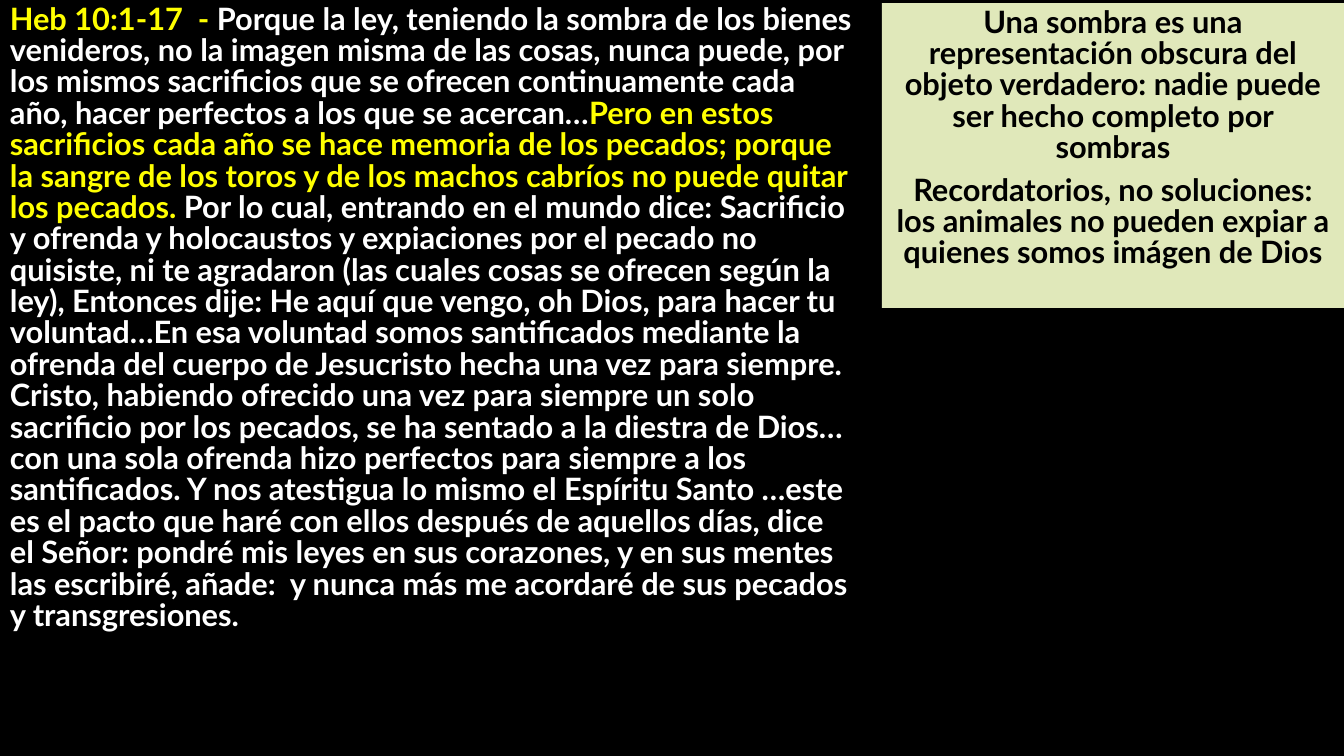
from pptx import Presentation
from pptx.dml.color import RGBColor
from pptx.enum.shapes import MSO_SHAPE
from pptx.enum.text import MSO_ANCHOR, PP_ALIGN
from pptx.util import Emu, Pt

COLORS = {
    "background": "000000",
    "scripture": "FFFFFF",
    "highlight": "FFFF00",
    "note_fill": "E0E8BA",
    "note_text": "000000",
}

PASSAGE = [
    ("Heb 10:1-17  - ", "highlight"),
    ("Porque la ley, teniendo la sombra de los bienes venideros, no la imagen misma "
     "de las cosas, nunca puede, por los mismos sacrificios que se ofrecen "
     "continuamente cada año, hacer perfectos a los que se acercan…", "scripture"),
    ("Pero en estos sacrificios cada año se hace memoria de los pecados; porque la "
     "sangre de los toros y de los machos cabríos no puede quitar los pecados.",
     "highlight"),
    (" Por lo cual, entrando en el mundo dice: Sacrificio y ofrenda y holocaustos y "
     "expiaciones por el pecado no quisiste, ni te agradaron (las cuales cosas se "
     "ofrecen según la ley), Entonces dije: He aquí que vengo, oh Dios, para hacer tu "
     "voluntad…En esa voluntad somos santificados mediante la ofrenda del cuerpo de "
     "Jesucristo hecha una vez para siempre. Cristo, habiendo ofrecido una vez para "
     "siempre un solo sacrificio por los pecados, se ha sentado a la diestra de "
     "Dios…con una sola ofrenda hizo perfectos para siempre a los santificados. Y nos "
     "atestigua lo mismo el Espíritu Santo …este es el pacto que haré con ellos "
     "después de aquellos días, dice el Señor: pondré mis leyes en sus corazones, y en "
     "sus mentes las escribiré, añade:  y nunca más me acordaré de sus pecados y "
     "transgresiones.", "scripture"),
]

NOTES = [
    ("Una sombra es una representación obscura del objeto verdadero: nadie puede ser "
     "hecho completo por sombras", 168),
    ("Recordatorios, no soluciones: los animales no pueden expiar a quienes somos "
     "imágen de Dios", 137),
]


def px(length):
    return Emu(round(length * 914400 / 100.8))


def color(name):
    return RGBColor.from_string(COLORS[name])


class SlideBuilder:
    font = "Lato"
    size = Pt(22)
    line_spacing = 0.85

    def __init__(self, slide):
        self.slide = slide
        slide.background.fill.solid()
        slide.background.fill.fore_color.rgb = color("background")

    def fill_text(self, frame, parts, align):
        frame.word_wrap = True
        frame.vertical_anchor = MSO_ANCHOR.TOP
        paragraph = frame.paragraphs[0]
        paragraph.alignment = align
        paragraph.line_spacing = self.line_spacing
        for text, color_name in parts:
            run = paragraph.add_run()
            run.text = text
            run.font.name = self.font
            run.font.size = self.size
            run.font.bold = True
            run.font.color.rgb = color(color_name)

    def passage(self, parts, left, top, width, height):
        passage = self.slide.shapes.add_textbox(px(left), px(top), px(width), px(height))
        self.fill_text(passage.text_frame, parts, PP_ALIGN.LEFT)

    def note(self, text, left, top, width, height):
        note = self.slide.shapes.add_shape(
            MSO_SHAPE.RECTANGLE, px(left), px(top), px(width), px(height))
        note.shadow.inherit = False
        note.fill.solid()
        note.fill.fore_color.rgb = color("note_fill")
        note.line.fill.background()
        self.fill_text(note.text_frame, [(text, "note_text")], PP_ALIGN.CENTER)


def main():
    presentation = Presentation()
    presentation.slide_width = px(1344)
    presentation.slide_height = px(756)
    builder = SlideBuilder(presentation.slides.add_slide(presentation.slide_layouts[6]))

    builder.passage(PASSAGE, 0, 0, 865, 740)
    note_top = 3
    for text, height in NOTES:
        builder.note(text, 882, note_top, 462, height)
        note_top += height

    presentation.save("out.pptx")


if __name__ == "__main__":
    main()
